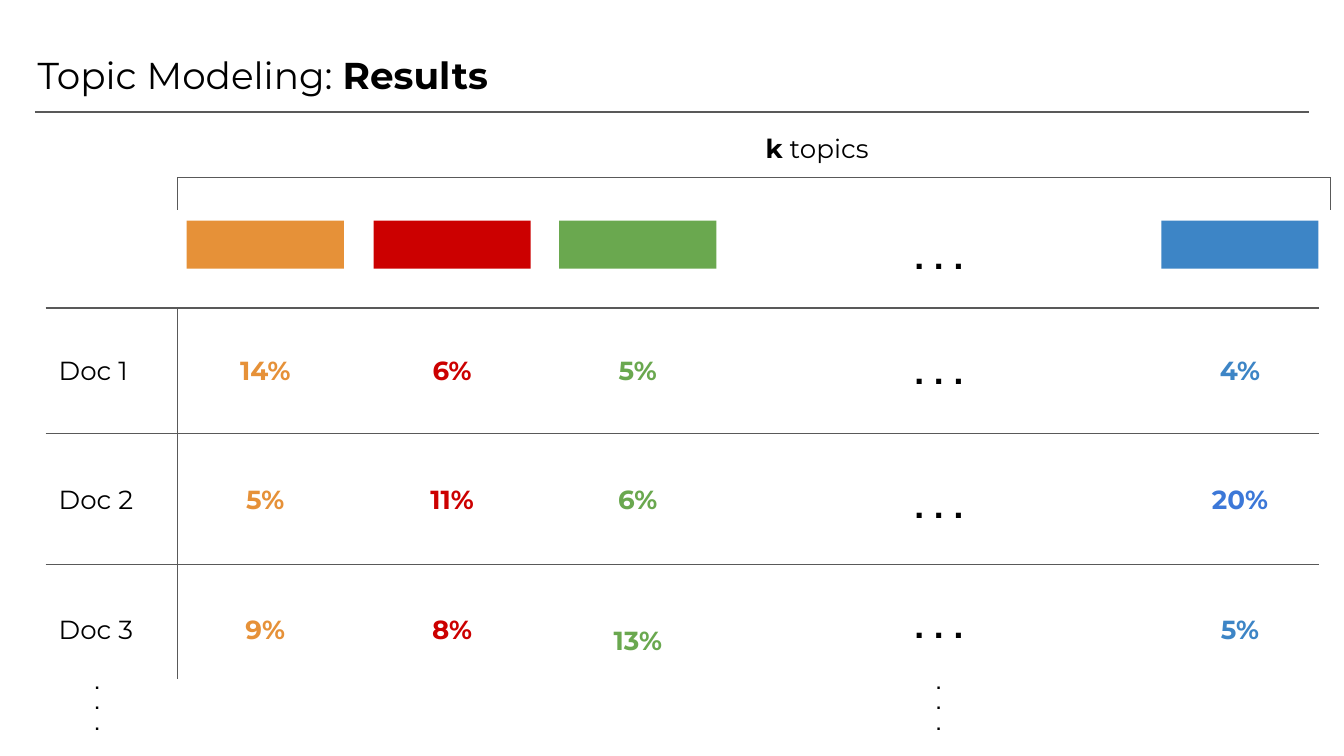
from dataclasses import dataclass

from pptx import Presentation
from pptx import util as u
from pptx.dml.color import RGBColor
from pptx.enum import shapes, text
from pptx.oxml import ns
from lxml import etree

BLACK, GREY = "000000", "595959"
SANS, ARIAL = "Montserrat", "Arial"
MID = text.PP_ALIGN.CENTER
COL_W, ROW_H = 2.97, 1.12
LEFT, RIGHT, STEM = 0.86, 24.92, 3.35
DOC_TOPS = (6.45, 8.89, 11.35)


@dataclass
class Share:
    label: str
    color: str
    drop: float = 0


@dataclass
class Topic:
    left: float
    color: str
    shares: list[Share]


def tint(code: str) -> RGBColor:
    return RGBColor.from_string(code)


def write(slide, runs: list[tuple[str, bool]], left: float, top: float,
          width: float, height: float, *, size: float = 14, font: str = SANS,
          color: str = BLACK, align=None) -> None:
    """Add a text box holding one paragraph of (words, bold) runs."""
    box = slide.shapes.add_textbox(*map(u.Cm, (left, top, width, height)))
    frame = box.text_frame
    frame.word_wrap = True
    frame.auto_size = text.MSO_AUTO_SIZE.SHAPE_TO_FIT_TEXT
    frame.margin_left = frame.margin_right = u.Cm(0.25)
    frame.margin_top = frame.margin_bottom = u.Cm(0.25)
    para = frame.paragraphs[0]
    para.alignment = align
    for words, bold in runs:
        run = para.add_run()
        run.text = words
        run.font.name, run.font.size = font, u.Pt(size)
        run.font.bold = bold
        run.font.color.rgb = tint(color)


def rule(host, x1: float, y1: float, x2: float, y2: float) -> None:
    """Draw a thin grey line on a slide or in a group."""
    line = host.shapes.add_connector(
        shapes.MSO_CONNECTOR.STRAIGHT, *map(u.Cm, (x1, y1, x2, y2)))
    line.line.color.rgb = tint(GREY)
    line.line.width = u.Pt(0.75)
    etree.SubElement(line._element.spPr, ns.qn("a:effectLst"))


def swatch(slide, topic: Topic) -> None:
    box = slide.shapes.add_shape(
        shapes.MSO_SHAPE.RECTANGLE,
        *map(u.Cm, (topic.left, 4.17, COL_W, 0.91)))
    box.shadow.inherit = False
    box.fill.solid()
    box.fill.fore_color.rgb = tint(topic.color)
    box.line.fill.background()


def column(left: float, color: str, *labels: str) -> Topic:
    return Topic(left, color, [Share(label, color) for label in labels])


def main() -> None:
    show = Presentation()
    show.slide_width, show.slide_height = u.Cm(25.4), u.Cm(14.29)
    slide = show.slides.add_slide(show.slide_layouts[6])

    topics = [
        column(3.53, "E69138", "14%", "5%", "9%"),
        column(7.06, "CC0000", "6%", "11%", "8%"),
        column(10.57, "6AA84F", "5%", "6%", "13%"),
        column(21.95, "3D85C6", "4%", "20%", "5%"),
    ]
    topics[2].shares[2].drop = 0.2
    topics[3].shares[1].color = "3C78D8"

    # Title
    write(slide, [("Topic Modeling: ", False), ("Results", True)],
          0.46, 0.74, 18.06, 1.37, size=20)
    rule(slide, 0.66, 2.12, 24.74, 2.12)

    # Bracket over the topics
    write(slide, [("k", True), (" topics", False)], 14.22, 2.26, COL_W, ROW_H)
    group = slide.shapes.add_group_shape()
    end = 25.15
    rule(group, STEM, 3.96, STEM, 3.35)
    rule(group, STEM, 3.35, end, 3.35)
    rule(group, end, 3.96, end, 3.35)

    # Grid lines
    for y in (5.82, 8.2, 10.67):
        rule(slide, LEFT, y, RIGHT, y)
    rule(slide, STEM, 5.84, STEM, 12.83)

    # Document names
    for num, top in enumerate(DOC_TOPS, 1):
        write(slide, [(f"Doc {num}", False)], LEFT, top, COL_W, ROW_H)

    # Topic columns
    for topic in topics:
        swatch(slide, topic)
        for share, top in zip(topic.shares, DOC_TOPS):
            write(slide, [(share.label, True)], topic.left, top + share.drop,
                  COL_W, ROW_H, color=share.color, align=MID)

    # Dots for what is left out, across and down
    dots = [(". . .", True)]
    for top in (4.17, 6.35, 8.89, 11.15):
        write(slide, dots, 15.52, top, 4.45, 1.32,
              size=19, font=ARIAL, align=MID)
    for left in (1.47, 17.37):
        write(slide, dots, left, 12.47, 0.74, 1.68,
              size=9, font=ARIAL, align=MID)

    show.save("out.pptx")


if __name__ == "__main__":
    main()
